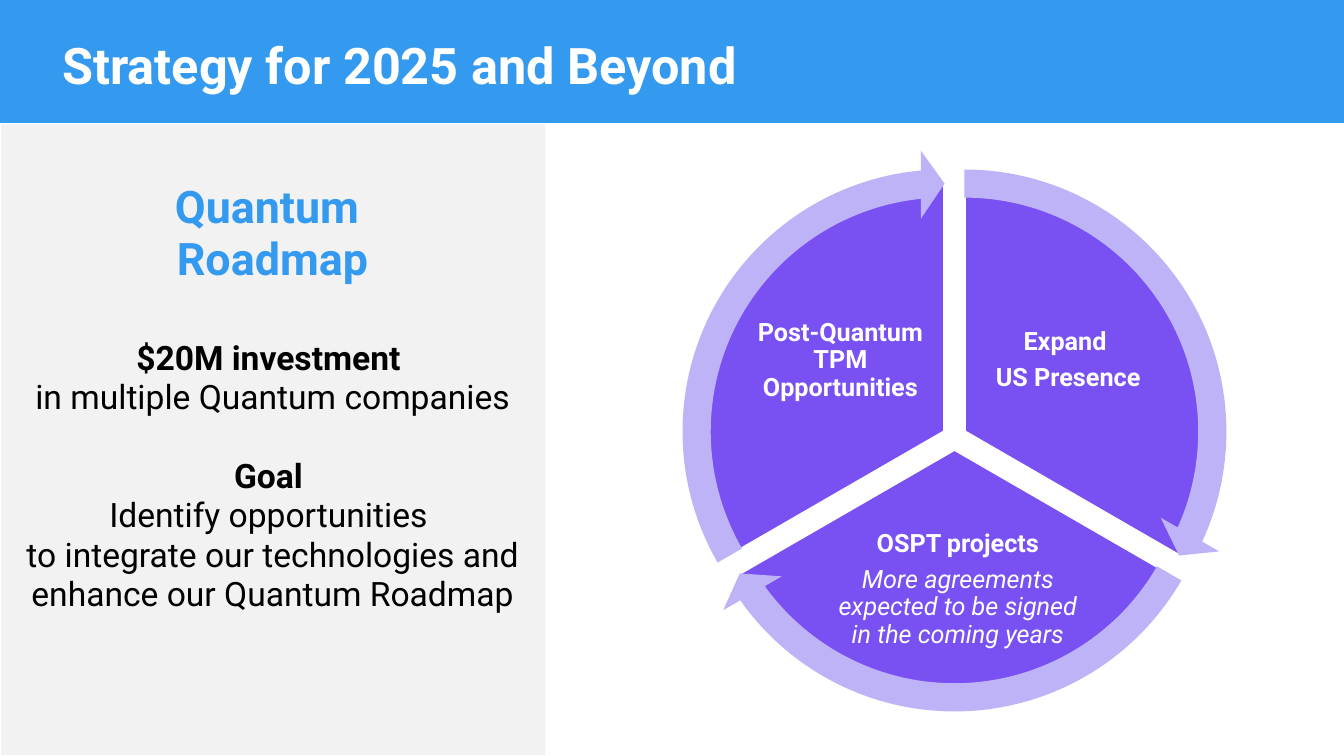
"""Build the strategy slide: a quantum roadmap panel beside a three-part cycle."""
from lxml import etree
from pptx import Presentation
from pptx.dml.color import RGBColor
from pptx.enum.shapes import MSO_SHAPE
from pptx.enum.text import MSO_ANCHOR, PP_ALIGN
from pptx.oxml.ns import qn
from pptx.util import Cm, Pt

BLUE = RGBColor(0x33, 0x9A, 0xF0)
GREY = RGBColor(0xF2, 0xF2, 0xF2)
VIOLET = RGBColor(0x79, 0x50, 0xF2)
LILAC = RGBColor(0xBE, 0xB3, 0xF7)
WHITE = RGBColor(0xFF, 0xFF, 0xFF)
BLACK = RGBColor(0, 0, 0)
RECTANGLE, PIE, ARROW = MSO_SHAPE.RECTANGLE, MSO_SHAPE.PIE, MSO_SHAPE.CIRCULAR_ARROW
MIDDLE, TOP = MSO_ANCHOR.MIDDLE, MSO_ANCHOR.TOP
LEFT, CENTER = PP_ALIGN.LEFT, PP_ALIGN.CENTER


def write(frame, text, size, color=WHITE, bold=True, italic=False, align=CENTER,
          before=0, after=0, spacing=1.0):
    para = frame.paragraphs[0]
    if para.runs:
        para = frame.add_paragraph()
    para.alignment = align
    para.line_spacing = spacing
    para.space_before, para.space_after = Pt(before), Pt(after)
    span = para.add_run()
    span.text = text
    font = span.font
    font.name, font.size, font.bold, font.italic = "Roboto", Pt(size), bold, italic
    font.color.rgb = color


def add_filled(kind, left, top, width, height, color, adjustments=()):
    shape = page.shapes.add_shape(kind, Cm(left), Cm(top), Cm(width), Cm(height))
    shape.shadow.inherit = False
    shape.fill.solid()
    shape.fill.fore_color.rgb = color
    shape.line.fill.background()
    for index, value in enumerate(adjustments):
        shape.adjustments[index] = value
    return shape


deck = Presentation()
deck.slide_width, deck.slide_height = Cm(33.87), Cm(19.05)
page = deck.slides.add_slide(deck.slide_layouts[5])

title = page.shapes.title
header = add_filled(RECTANGLE, 0, 0, 33.87, 3.1, BLUE)
title._element.addprevious(header._element)
title.left, title.top, title.width, title.height = Cm(1.57), Cm(0.43), Cm(29.85), Cm(2.36)
frame = title.text_frame
frame.vertical_anchor = MIDDLE
frame.margin_left = frame.margin_right = frame.margin_top = frame.margin_bottom = 0
write(frame, "Strategy for 2025 and Beyond", 36, align=LEFT)

table = page.shapes.add_table(1, 1, 0, Cm(3.12), Cm(13.74), Cm(15.93)).table
table.first_row = table.horz_banding = False
cell = table.cell(0, 0)
cell.vertical_anchor = TOP
cell.margin_top = Cm(1.45)
cell_properties = cell._tc.get_or_add_tcPr()
for side in ("a:lnL", "a:lnR", "a:lnT", "a:lnB"):
    border = etree.SubElement(cell_properties, qn(side), w=str(Pt(1)))
    border_fill = etree.SubElement(border, qn("a:solidFill"))
    etree.SubElement(border_fill, qn("a:srgbClr"), val=str(WHITE))
cell.fill.solid()
cell.fill.fore_color.rgb = GREY

roadmap = [
    ("Quantum ", 32, BLUE, True, 0),
    ("Roadmap", 32, BLUE, True, 0),
    ("$20M investment ", 24, BLACK, True, 37.5),
    ("in multiple Quantum companies", 24, BLACK, False, 0),
    ("Goal ", 24, BLACK, True, 28),
    ("Identify opportunities ", 24, BLACK, False, 0),
    ("to integrate our technologies and enhance our Quantum Roadmap", 24, BLACK, False, 0),
]
for text, size, color, bold, before in roadmap:
    write(cell.text_frame, text, size, color, bold, before=before)

PIE_SIZE, ARROW_SIZE = 12.65, 14.2
ARROW_OFFSET = (ARROW_SIZE - PIE_SIZE) / 2
sectors = [
    (17.98, 4.55, (162, 18), (14.725, 161.994), (24.66, 7.21, 4.52, 3.76),
     [("Expand ", True), ("US Presence", True)]),
    (17.73, 5.0, (18, 90), (86.72, 18.005), (20.75, 13.21, 6.78, 3.3),
     [("OSPT projects", True),
      ("More agreements expected to be signed in the coming years", False)]),
    (17.48, 4.55, (90, 162), (158.73, 90), (18.92, 7.21, 4.52, 3.76),
     [("Post-Quantum TPM Opportunities", True)]),
]
for left, top, angles, _, label, lines in sectors:
    pie = add_filled(PIE, left, top, PIE_SIZE, PIE_SIZE, VIOLET, angles)
    pie.line.color.rgb = WHITE
    pie.line.width = Pt(2)
    box = page.shapes.add_textbox(*[Cm(length) for length in label])
    frame = box.text_frame
    frame.word_wrap = True
    frame.vertical_anchor = MIDDLE
    frame.margin_left = frame.margin_right = Cm(0.08)
    frame.margin_top = frame.margin_bottom = Cm(0.08)
    for text, bold in lines:
        write(frame, text, 18, bold=bold, italic=not bold, after=6.3, spacing=0.9)

for left, top, _, (end, start), _, _ in sectors:
    add_filled(ARROW, left - ARROW_OFFSET, top - ARROW_OFFSET, ARROW_SIZE, ARROW_SIZE,
               LILAC, (0.05, 3.28, end, start, 0.06))

deck.save("out.pptx")
